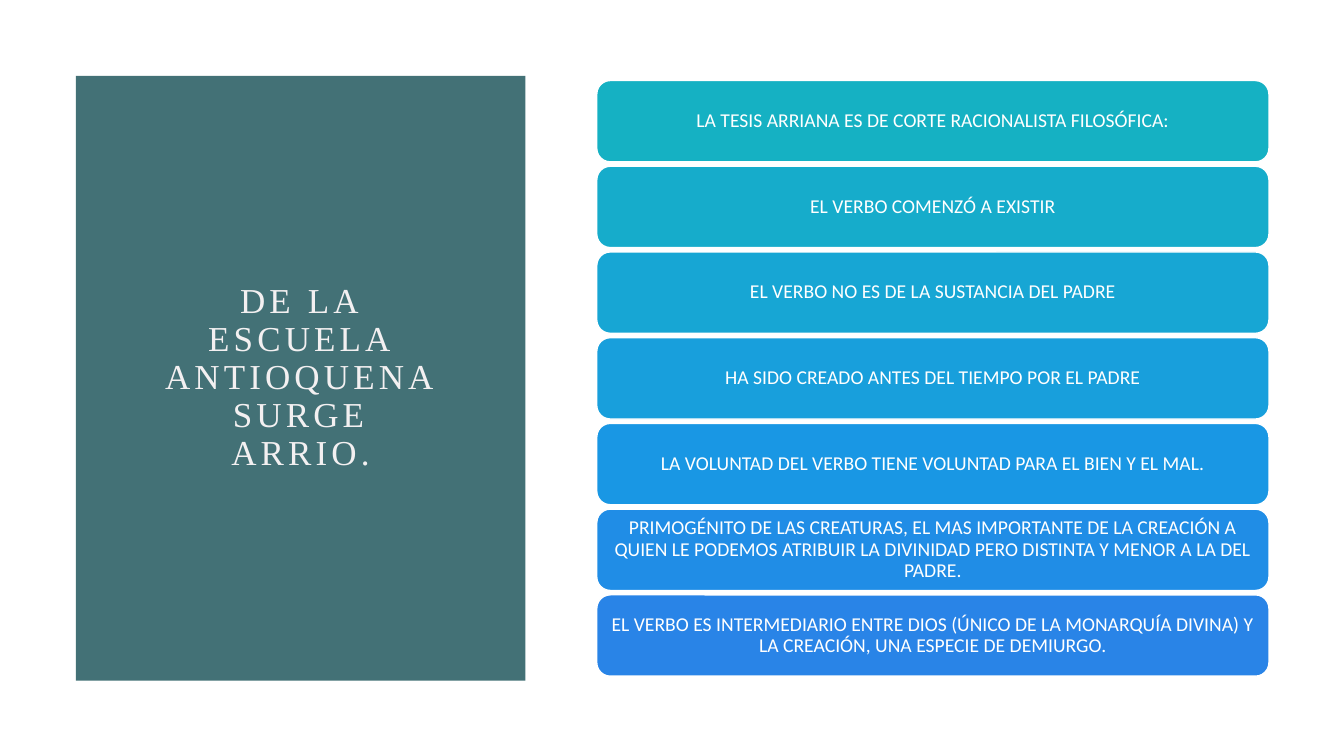
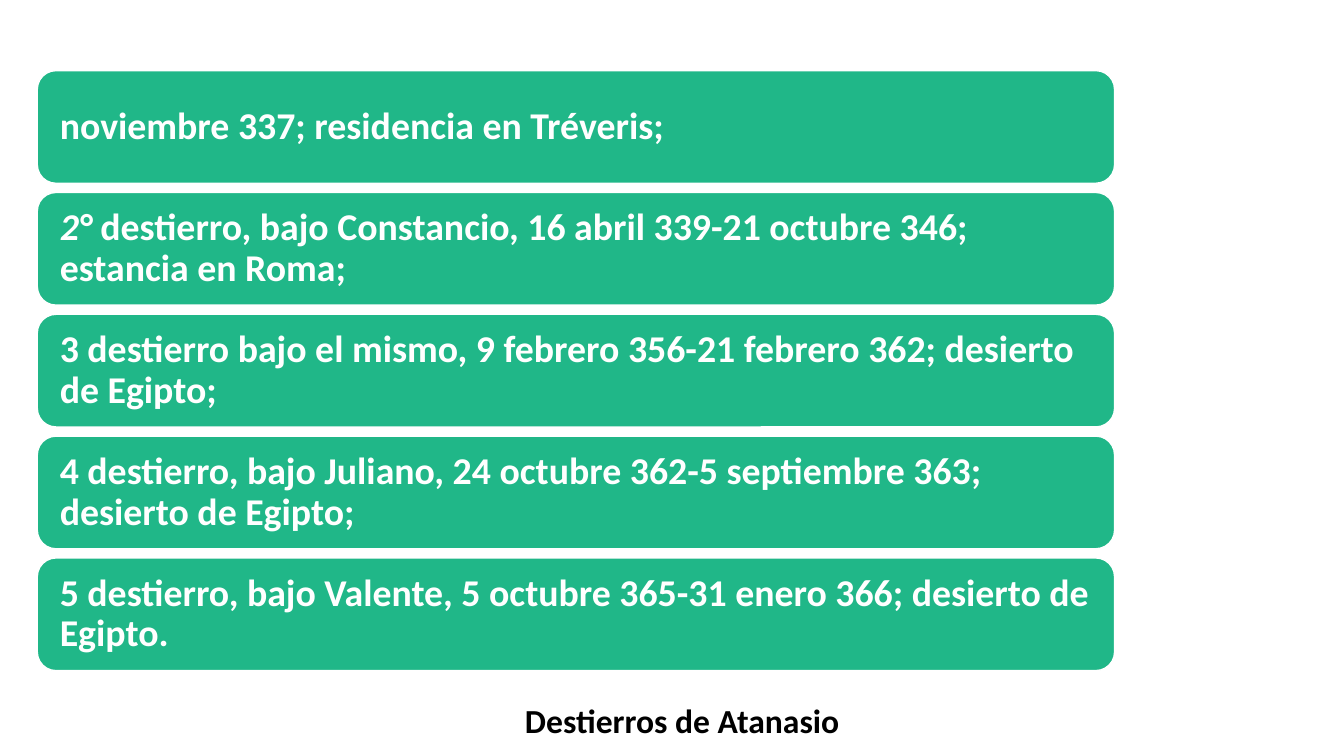
from pptx import Presentation
from pptx.dml.color import RGBColor
from pptx.enum.shapes import MSO_SHAPE
from pptx.enum.text import MSO_ANCHOR, MSO_AUTO_SIZE, PP_ALIGN
from pptx.util import Cm, Pt

COLORS = {
    "white": "FFFFFF",
    "black": "000000",
    "panel": "437176",
    "panel_text": "F3F0F1",
    "green": "20B788",
    "turquoise": "15B1C3",
    "lagoon": "16ACCB",
    "cyan": "17A6D4",
    "sky": "189FDC",
    "azure": "1997E4",
    "cobalt": "208DE6",
    "blue": "2984E7",
}
TITLE_ONLY = 5

THESES = [
    ("LA TESIS ARRIANA ES DE CORTE RACIONALISTA FILOSÓFICA:", "turquoise"),
    ("EL VERBO COMENZÓ A EXISTIR", "lagoon"),
    ("EL VERBO NO ES DE LA SUSTANCIA DEL PADRE", "cyan"),
    ("HA SIDO CREADO ANTES DEL TIEMPO POR EL PADRE", "sky"),
    ("LA VOLUNTAD DEL VERBO TIENE VOLUNTAD PARA EL BIEN Y EL MAL.", "azure"),
    ("PRIMOGÉNITO DE LAS CREATURAS, EL MAS IMPORTANTE DE LA CREACIÓN A QUIEN "
     "LE PODEMOS ATRIBUIR LA DIVINIDAD PERO DISTINTA Y MENOR A LA DEL PADRE.", "cobalt"),
    ("EL VERBO ES INTERMEDIARIO ENTRE DIOS (ÚNICO DE LA MONARQUÍA DIVINA) Y "
     "LA CREACIÓN, UNA ESPECIE DE DEMIURGO.", "blue"),
]
EXILES = [
    "noviembre 337; residencia en Tréveris;",
    [("2° ", True),
     ("destierro, bajo Constancio, 16 abril 339-21 octubre 346; estancia en Roma;", False)],
    "3 destierro bajo el mismo, 9 febrero 356-21 febrero 362; desierto de Egipto;",
    "4 destierro, bajo Juliano, 24 octubre 362-5 septiembre 363; desierto de Egipto;",
    "5 destierro, bajo Valente, 5 octubre 365-31 enero 366; desierto de Egipto.",
]


def rgb(name):
    return RGBColor.from_string(COLORS[name])


def write_text(shape, text, *, size, color="white", font="Calibri", bold=False,
               align=PP_ALIGN.LEFT, anchor=MSO_ANCHOR.MIDDLE, line_spacing=0.9,
               tracking=0, margins=(0.25, 0.13)):
    """Write a string, or a list of (string, italic) pairs; margins are (sides, top and bottom) in cm."""
    frame = shape.text_frame
    frame.word_wrap = True
    frame.auto_size = MSO_AUTO_SIZE.NONE
    frame.vertical_anchor = anchor
    frame.margin_left = frame.margin_right = Cm(margins[0])
    frame.margin_top = frame.margin_bottom = Cm(margins[1])
    para = frame.paragraphs[0]
    para.alignment = align
    para.line_spacing = line_spacing
    for words, italic in [(text, False)] if isinstance(text, str) else text:
        span = para.add_run()
        span.text = words
        span.font.name = font
        span.font.size = Pt(size)
        span.font.bold = bold
        span.font.italic = italic
        span.font.color.rgb = rgb(color)
        if tracking:
            span._r.get_or_add_rPr().set("spc", str(tracking * 100))


def place_title(page, box, text, fill=None, **text_format):
    title = page.shapes.title
    title.left, title.top, title.width, title.height = map(Cm, box)
    if fill:
        title.fill.solid()
        title.fill.fore_color.rgb = rgb(fill)
    write_text(title, text, **text_format)


def stack_cards(page, box, cards, gap, **text_format):
    """Fill the box with equal rounded cards, each given as (text, color)."""
    left, top, width, height = box
    card_height = (height - gap * (len(cards) - 1)) / len(cards)
    for row, (text, color) in enumerate(cards):
        card_top = top + row * (card_height + gap)
        card = page.shapes.add_shape(MSO_SHAPE.ROUNDED_RECTANGLE, Cm(left), Cm(card_top),
                                     Cm(width), Cm(card_height))
        card.shadow.inherit = False
        card.fill.solid()
        card.fill.fore_color.rgb = rgb(color)
        card.line.color.rgb = rgb("white")
        card.line.width = Pt(1)
        write_text(card, text, **text_format)


def add_page(deck):
    return deck.slides.add_slide(deck.slide_layouts[TITLE_ONLY])


def build_theses(deck):
    page = add_page(deck)
    place_title(page, (1.91, 1.91, 11.33, 15.24), "DE LA ESCUELA ANTIOQUENA SURGE ARRIO.",
                fill="panel", size=25, color="panel_text", font="Times New Roman",
                align=PP_ALIGN.CENTER, tracking=3, margins=(2.16, 2))
    stack_cards(page, (15.04, 2.03, 16.94, 15.01), THESES, gap=0.11,
                size=14, align=PP_ALIGN.CENTER)


def build_exiles(deck):
    page = add_page(deck)
    place_title(page, (12.98, 17.5, 18.26, 1.5), "Destierros de Atanasio", size=24,
                color="black", bold=True, anchor=MSO_ANCHOR.TOP, line_spacing=1)
    stack_cards(page, (0.94, 1.78, 27.15, 15.12), [(text, "green") for text in EXILES],
                gap=0.23, size=27, bold=True, margins=(0.43, 0.43))


def main():
    deck = Presentation()
    deck.slide_width, deck.slide_height = Cm(33.87), Cm(19.05)
    build_theses(deck)
    build_exiles(deck)
    deck.save("out.pptx")


if __name__ == "__main__":
    main()
